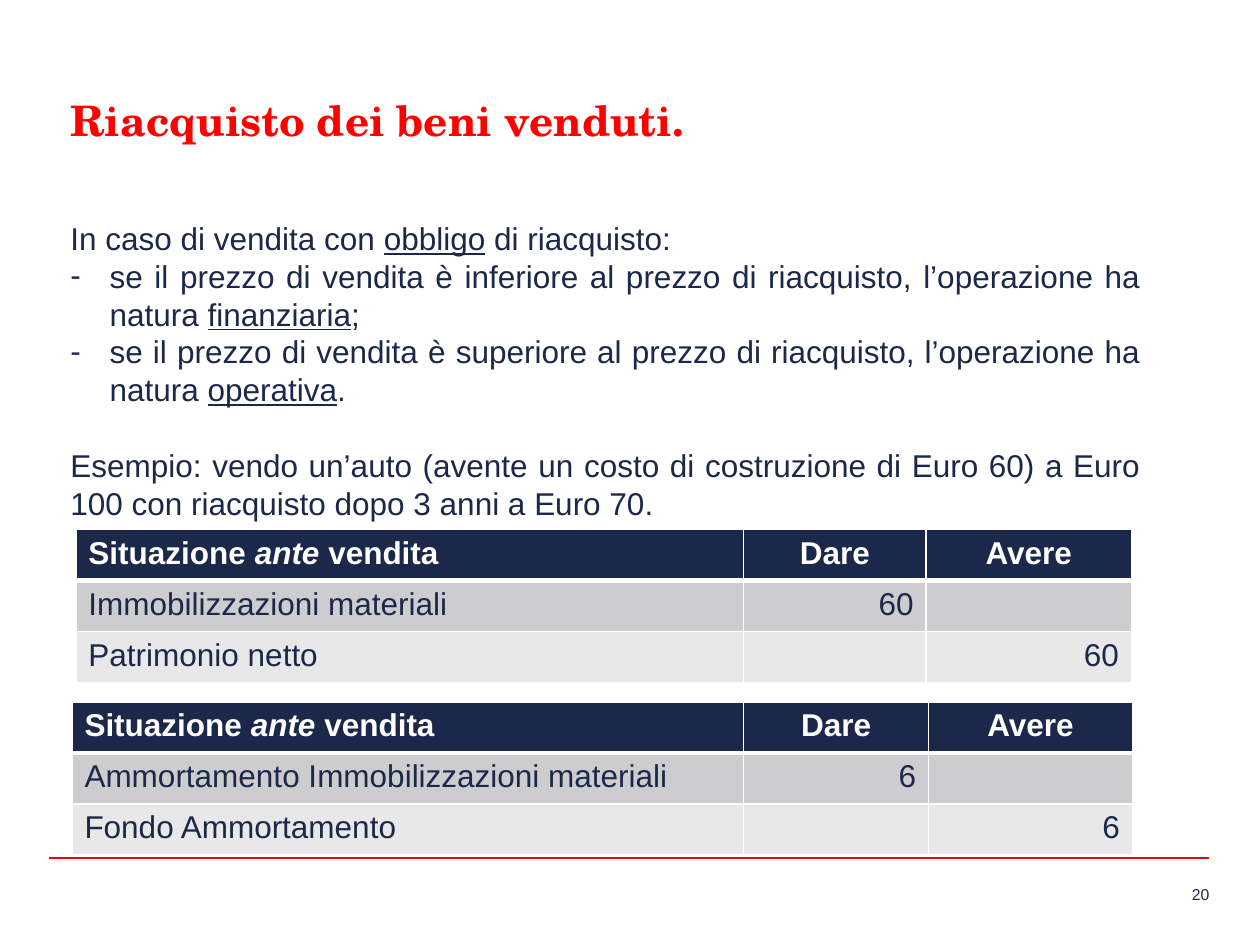
from dataclasses import dataclass

from lxml.etree import SubElement
from pptx import Presentation
from pptx.dml.color import RGBColor
from pptx.enum.shapes import MSO_CONNECTOR
from pptx.enum.text import MSO_ANCHOR, MSO_AUTO_SIZE, PP_ALIGN
from pptx.oxml.ns import qn
from pptx.util import Cm, Pt


@dataclass(frozen=True)
class Theme:
    navy: str = "1B2849"
    title_red: str = "FF0000"
    rule_red: str = "E30613"
    white: str = "FFFFFF"
    band_dark: str = "CDCDD0"
    band_light: str = "E8E8E9"
    title_font: str = "TeX Gyre Schola"
    body_font: str = "Arial"
    title_size: float = 24
    body_size: float = 18
    number_size: float = 9
    line_pitch: float = 21.6


THEME = Theme()


def write_runs(paragraph, text, font=THEME.body_font, size=THEME.body_size,
               color=THEME.navy, bold=False, align=PP_ALIGN.LEFT, emphasis="underline"):
    """Write text into a paragraph; parts between asterisks get the emphasis."""
    paragraph.alignment = align
    for index, part in enumerate(text.split("*")):
        run = paragraph.add_run()
        run.text = part
        run.font.name = font
        run.font.size = Pt(size)
        run.font.bold = bold
        run.font.color.rgb = RGBColor.from_string(color)
        if index % 2:
            setattr(run.font, emphasis, True)


def add_text_box(slide, left, top, width, height, margins=True):
    frame = slide.shapes.add_textbox(Cm(left), Cm(top), Cm(width), Cm(height)).text_frame
    frame.word_wrap = True
    if not margins:
        frame.margin_left = frame.margin_right = frame.margin_top = frame.margin_bottom = 0
    return frame


def add_title(slide, text):
    title = slide.shapes.title
    title.left, title.top, title.width, title.height = Cm(1.17), Cm(1.78), Cm(23.06), Cm(1.27)
    frame = title.text_frame
    frame.auto_size = MSO_AUTO_SIZE.NONE
    frame.vertical_anchor = MSO_ANCHOR.TOP
    write_runs(frame.paragraphs[0], text, font=THEME.title_font,
               size=THEME.title_size, color=THEME.title_red, bold=True)


def set_dash_bullet(paragraph):
    properties = paragraph._p.get_or_add_pPr()
    properties.set("marL", str(Cm(0.79)))
    properties.set("indent", str(-Cm(0.79)))
    SubElement(properties, qn("a:buFont"), typeface=THEME.body_font)
    SubElement(properties, qn("a:buChar"), char="-")


def add_body(slide, introduction, cases, example):
    frame = add_text_box(slide, 1.17, 4.29, 22.07, 7.95)
    for index, text in enumerate([introduction, *cases, example]):
        paragraph = frame.add_paragraph() if index else frame.paragraphs[0]
        if text in cases:
            set_dash_bullet(paragraph)
        paragraph.line_spacing = Pt(THEME.line_pitch)
        if text == example:
            paragraph.space_before = Pt(THEME.line_pitch)
        write_runs(paragraph, text, align=PP_ALIGN.JUSTIFY)


def set_borders(cell, bottom_width):
    properties = cell._tc.get_or_add_tcPr()
    widths = {"a:lnL": 1, "a:lnR": 1, "a:lnT": 1, "a:lnB": bottom_width}
    for position, (tag, width) in enumerate(widths.items()):
        line = properties.makeelement(qn(tag), {"w": str(Pt(width))})
        fill = SubElement(line, qn("a:solidFill"))
        SubElement(fill, qn("a:srgbClr"), val=THEME.white)
        properties.insert(position, line)


def add_entry_table(slide, left, top, column_widths, entries):
    row_height = 1.03
    rows = [("Situazione *ante* vendita", "Dare", "Avere"), *entries]
    table = slide.shapes.add_table(
        len(rows), len(column_widths), Cm(left), Cm(top),
        Cm(sum(column_widths)), Cm(row_height * len(rows))).table
    for column, width in zip(table.columns, column_widths):
        column.width = Cm(width)
    fills = (THEME.navy, THEME.band_dark, THEME.band_light)
    for row_index, row in enumerate(rows):
        table.rows[row_index].height = Cm(row_height)
        header = row_index == 0
        number_align = PP_ALIGN.CENTER if header else PP_ALIGN.RIGHT
        for column_index, text in enumerate(row):
            cell = table.cell(row_index, column_index)
            cell.fill.solid()
            cell.fill.fore_color.rgb = RGBColor.from_string(fills[row_index])
            set_borders(cell, bottom_width=3 if header else 1)
            if text:
                write_runs(cell.text_frame.paragraphs[0], text, bold=header,
                           color=THEME.white if header else THEME.navy,
                           align=number_align if column_index else PP_ALIGN.LEFT,
                           emphasis="italic")


def add_footer(slide, number):
    rule = slide.shapes.add_connector(
        MSO_CONNECTOR.STRAIGHT, Cm(0.99), Cm(17.3), Cm(24.38), Cm(17.3))
    rule.line.color.rgb = RGBColor.from_string(THEME.rule_red)
    rule.line.width = Pt(1)
    SubElement(rule._element.spPr, qn("a:effectLst"))
    frame = add_text_box(slide, 22.63, 17.83, 1.75, 0.38, margins=False)
    write_runs(frame.paragraphs[0], number, size=THEME.number_size, align=PP_ALIGN.RIGHT)


def main():
    presentation = Presentation()
    presentation.slide_width, presentation.slide_height = Cm(25.4), Cm(19.05)
    slide = presentation.slides.add_slide(presentation.slide_layouts[5])

    # Footer rule and page number
    add_footer(slide, "20")

    # Title and explanation
    add_title(slide, "Riacquisto dei beni venduti.")
    add_body(
        slide,
        "In caso di vendita con *obbligo* di riacquisto:",
        ["se il prezzo di vendita è inferiore al prezzo di riacquisto, "
         "l’operazione ha natura *finanziaria*;",
         "se il prezzo di vendita è superiore al prezzo di riacquisto, "
         "l’operazione ha natura *operativa*."],
        "Esempio: vendo un’auto (avente un costo di costruzione di Euro 60) "
        "a Euro 100 con riacquisto dopo 3 anni a Euro 70.")

    # Accounting entries
    add_entry_table(slide, 1.53, 10.67, (13.46, 3.68, 4.14), [
        ("Immobilizzazioni materiali", "60", ""),
        ("Patrimonio netto", "", "60")])
    add_entry_table(slide, 1.45, 14.15, (13.54, 3.73, 4.11), [
        ("Ammortamento Immobilizzazioni materiali", "6", ""),
        ("Fondo Ammortamento", "", "6")])

    presentation.save("out.pptx")


if __name__ == "__main__":
    main()
